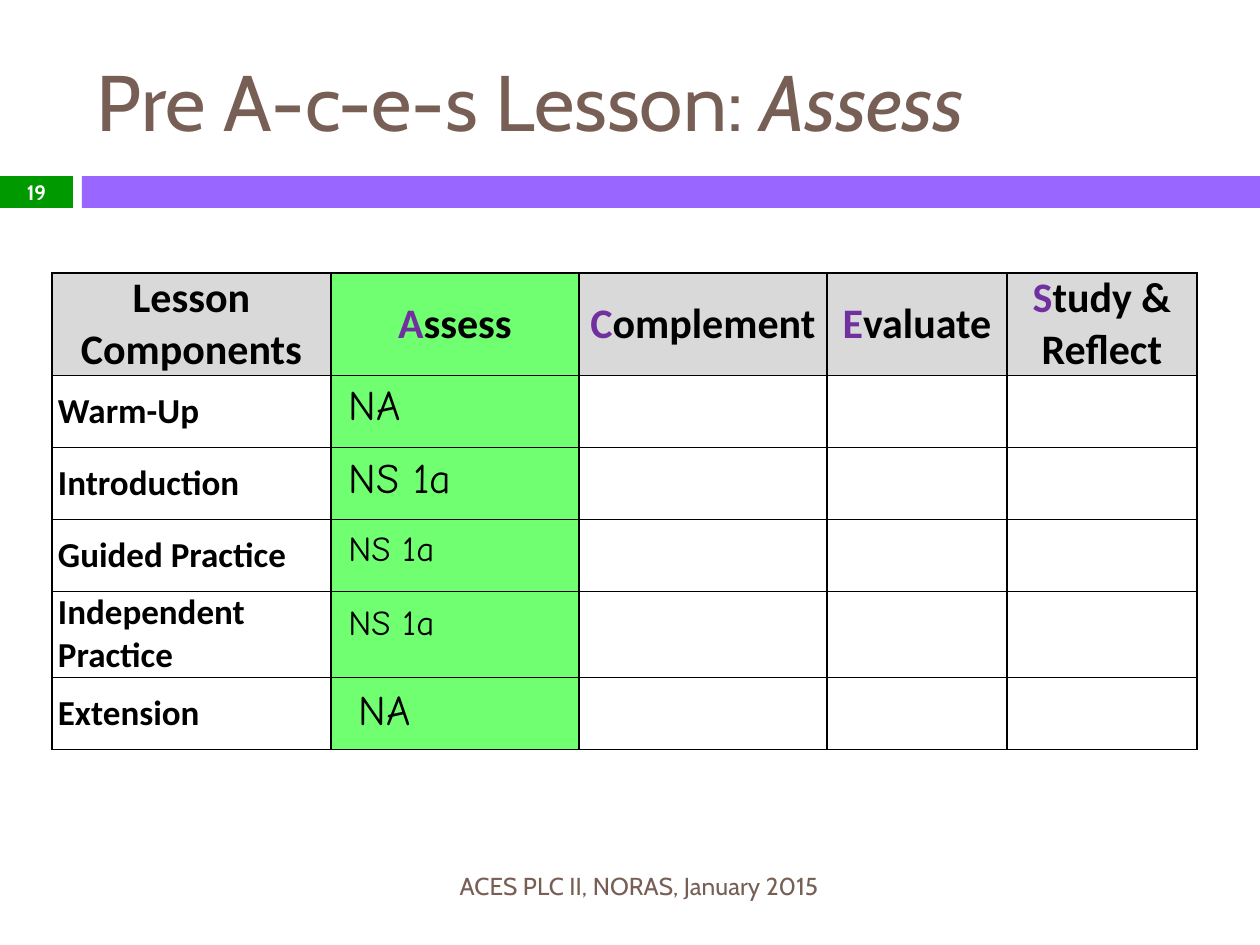
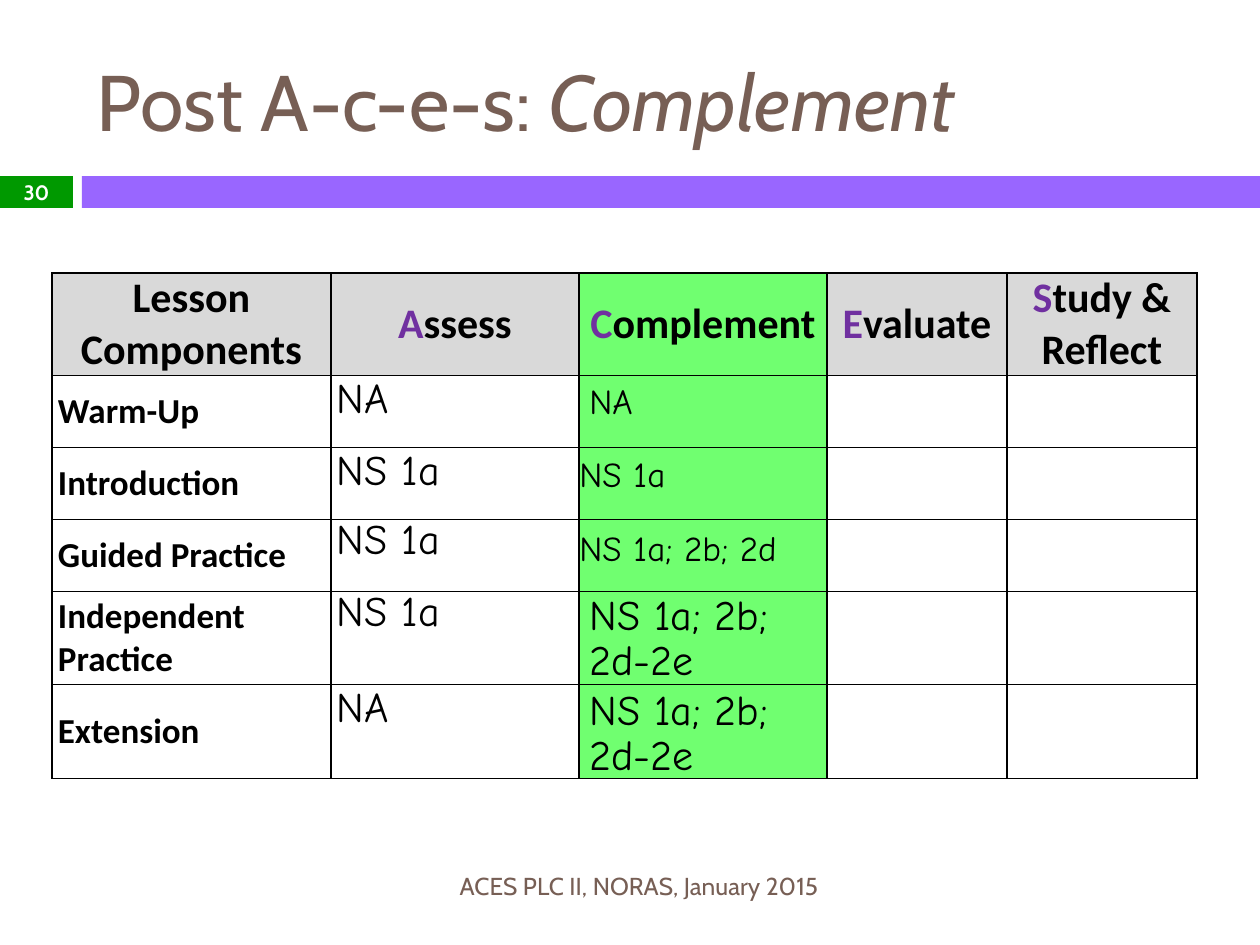
"""Build two lesson-planning slides that share a title style, band, grid and footer."""
from dataclasses import dataclass
from typing import NamedTuple

from lxml import etree
from pptx import Presentation
from pptx import slide as s
from pptx import table as t
from pptx import util as u
from pptx.dml import color as c
from pptx.enum import shapes, text
from pptx.oxml import ns
from pptx.text import text as words

PX = 914400 / 126
COLORS = {
    "title": "775F55", "number_band": "009900", "band": "9966FF",
    "header": "D9D9D9", "focus": "70FF70", "initial": "7030A0",
    "ink": "000000", "paper": "FFFFFF",
}
TITLE_FONT, GRID_FONT, NOTE_FONT = "Cabin", "Calibri", "Comic Neue"
FOOTER = "ACES PLC II, NORAS, January 2015"
HEADINGS = ["Lesson Components", "Assess", "Complement", "Evaluate", "Study & Reflect"]
COMPONENTS = ["Warm-Up", "Introduction", "Guided Practice", "Independent Practice", "Extension"]
COLUMN_WIDTHS = [279, 248, 248, 180, 190]
HEADER_HEIGHT, ROW_HEIGHT = 102, 72


class Box(NamedTuple):
    left: int
    top: int
    width: int
    height: int

    def emu(self) -> list[u.Emu]:
        return [px(length) for length in self]


class Style(NamedTuple):
    font: str
    size: float
    color: str
    bold: bool = False
    italic: bool = False


class Piece(NamedTuple):
    text: str
    style: Style


class Note(NamedTuple):
    box: Box
    text: str
    size: int


@dataclass(frozen=True)
class Lesson:
    number: int
    title: str
    focus: int
    last_heights: tuple[int, int]
    assessed: list[str]
    notes: list[Note]


TITLE = Style(TITLE_FONT, 45, "title")
NUMBER = Style(TITLE_FONT, 11.9, "paper", bold=True)
FOOT = Style(TITLE_FONT, 14, "title")
HEADING = Style(GRID_FONT, 24, "ink", bold=True)
COMPONENT = Style(GRID_FONT, 20, "ink", bold=True)
ANSWER = Style(NOTE_FONT, 24, "ink")

LESSONS = [
    Lesson(19, "Pre A-c-e-s Lesson: ", 1, (86, 72), [], [
        Note(Box(336, 378, 220, 59), "NA", 24),
        Note(Box(336, 451, 220, 105), "NS 1a", 24),
        Note(Box(336, 525, 220, 93), "NS 1a", 20),
        Note(Box(336, 599, 220, 93), "NS 1a", 20),
        Note(Box(346, 683, 220, 59), "NA", 24),
    ]),
    Lesson(30, "Post A-c-e-s: ", 2, (93, 94), ["NA", "NS 1a", "NS 1a", "NS 1a", "NA"], [
        Note(Box(577, 378, 273, 50), "NA", 20),
        Note(Box(567, 451, 273, 50), "NS 1a", 20),
        Note(Box(567, 525, 273, 50), "NS 1a; 2b; 2d", 20),
        Note(Box(577, 588, 273, 105), "NS 1a; 2b; 2d-2e", 24),
        Note(Box(577, 683, 273, 105), "NS 1a; 2b; 2d-2e", 24),
    ]),
]


def px(length: int) -> u.Emu:
    return u.Emu(round(length * PX))


def rgb(name: str) -> c.RGBColor:
    return c.RGBColor.from_string(COLORS[name])


def write(frame: words.TextFrame, pieces: list[Piece],
          align: text.PP_ALIGN = text.PP_ALIGN.LEFT, spacing: float = 1.0) -> None:
    para = frame.paragraphs[0]
    para.alignment = align
    para.line_spacing = spacing
    for piece in pieces:
        span = para.add_run()
        span.text = piece.text
        font = span.font
        font.name, font.size = piece.style.font, u.Pt(piece.style.size)
        font.bold, font.italic = piece.style.bold, piece.style.italic
        font.color.rgb = rgb(piece.style.color)


def add_text(page: s.Slide, box: Box, piece: Piece, align: text.PP_ALIGN) -> None:
    frame = page.shapes.add_textbox(*box.emu()).text_frame
    frame.word_wrap = True
    frame.vertical_anchor = text.MSO_ANCHOR.MIDDLE
    write(frame, [piece], align)


def add_note(page: s.Slide, note: Note) -> None:
    frame = page.shapes.add_textbox(*note.box.emu()).text_frame
    frame.word_wrap = True
    frame.auto_size = text.MSO_AUTO_SIZE.SHAPE_TO_FIT_TEXT
    write(frame, [Piece(note.text, ANSWER._replace(size=note.size))], spacing=0.9)


def add_band(page: s.Slide, box: Box, color: str) -> None:
    band = page.shapes.add_shape(shapes.MSO_SHAPE.RECTANGLE, *box.emu())
    band.shadow.inherit = False
    band.fill.solid()
    band.fill.fore_color.rgb = rgb(color)
    band.line.fill.background()


def add_title(page: s.Slide, lesson: Lesson) -> None:
    title = page.shapes.title
    title.left, title.top, title.width, title.height = Box(84, 32, 1124, 136).emu()
    frame = title.text_frame
    frame.auto_size = text.MSO_AUTO_SIZE.NONE
    frame.vertical_anchor = text.MSO_ANCHOR.MIDDLE
    write(frame, [Piece(lesson.title, TITLE),
                  Piece(HEADINGS[lesson.focus], TITLE._replace(italic=True))])


def format_cell(cell: t._Cell, color: str, anchor: text.MSO_ANCHOR) -> None:
    cell.margin_left = cell.margin_right = px(6)
    cell.margin_top = cell.margin_bottom = 0
    cell.vertical_anchor = anchor
    properties = cell._tc.get_or_add_tcPr()
    for side in ("lnL", "lnR", "lnT", "lnB"):
        line = etree.SubElement(properties, ns.qn(f"a:{side}"), w=str(u.Pt(1)))
        fill = etree.SubElement(line, ns.qn("a:solidFill"))
        etree.SubElement(fill, ns.qn("a:srgbClr"), val=COLORS["ink"])
    cell.fill.solid()
    cell.fill.fore_color.rgb = rgb(color)


def add_grid(page: s.Slide, lesson: Lesson) -> None:
    heights = [HEADER_HEIGHT, *[ROW_HEIGHT] * 3, *lesson.last_heights]
    box = Box(52, 273, sum(COLUMN_WIDTHS), sum(heights))
    grid = page.shapes.add_table(len(heights), len(COLUMN_WIDTHS), *box.emu()).table
    grid.first_row = grid.horz_banding = False
    for column, width in zip(grid.columns, COLUMN_WIDTHS):
        column.width = px(width)
    for row, height in zip(grid.rows, heights):
        row.height = px(height)
    for row in range(len(heights)):
        for column in range(len(COLUMN_WIDTHS)):
            plain = "paper" if row else "header"
            middle = row == 0 or column == 0
            format_cell(grid.cell(row, column), "focus" if column == lesson.focus else plain,
                        text.MSO_ANCHOR.MIDDLE if middle else text.MSO_ANCHOR.TOP)
    for column, heading in enumerate(HEADINGS):
        initial = HEADING._replace(color="initial") if column else HEADING
        write(grid.cell(0, column).text_frame,
              [Piece(heading[0], initial), Piece(heading[1:], HEADING)], text.PP_ALIGN.CENTER)
    for row, component in enumerate(COMPONENTS, 1):
        write(grid.cell(row, 0).text_frame, [Piece(component, COMPONENT)])
    for row, answer in enumerate(lesson.assessed, 1):
        spacing = 0.9 if row in (3, 4) else 1.0
        write(grid.cell(row, 1).text_frame, [Piece(answer, ANSWER)], spacing=spacing)


def add_lesson(page: s.Slide, lesson: Lesson) -> None:
    add_band(page, Box(0, 176, 73, 32), "number_band")
    add_band(page, Box(82, 176, 1178, 32), "band")
    add_title(page, lesson)
    add_grid(page, lesson)
    for note in lesson.notes:
        add_note(page, note)
    add_text(page, Box(0, 175, 73, 34), Piece(str(lesson.number), NUMBER), text.PP_ALIGN.CENTER)
    add_text(page, Box(84, 861, 747, 50), Piece(FOOTER, FOOT), text.PP_ALIGN.RIGHT)


def main() -> None:
    deck = Presentation()
    deck.slide_width, deck.slide_height = px(1260), px(945)
    for lesson in LESSONS:
        add_lesson(deck.slides.add_slide(deck.slide_layouts[5]), lesson)
    deck.save("out.pptx")


if __name__ == "__main__":
    main()
